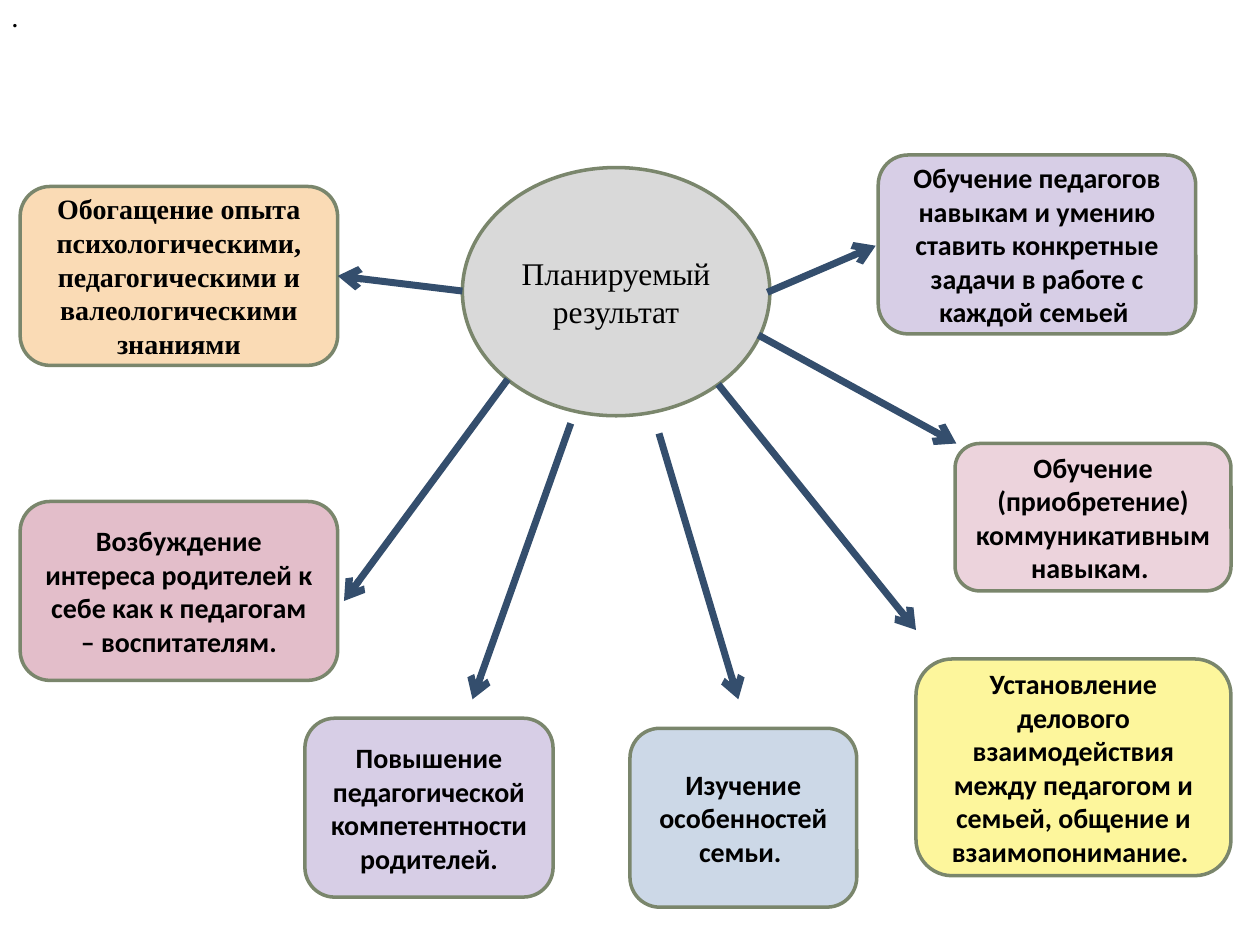
from lxml import etree
from pptx import Presentation
from pptx.dml.color import RGBColor
from pptx.enum.shapes import MSO_CONNECTOR, MSO_SHAPE
from pptx.enum.text import MSO_ANCHOR, MSO_AUTO_SIZE, PP_ALIGN
from pptx.oxml.ns import qn
from pptx.util import Inches, Pt

ELLIPSE, ROUNDED = MSO_SHAPE.OVAL, MSO_SHAPE.ROUNDED_RECTANGLE
STRAIGHT = MSO_CONNECTOR.STRAIGHT
MIDDLE = MSO_ANCHOR.MIDDLE
CENTER, JUSTIFY = PP_ALIGN.CENTER, PP_ALIGN.JUSTIFY
GROW = MSO_AUTO_SIZE.SHAPE_TO_FIT_TEXT

WIDTH, HEIGHT = Inches(10), Inches(7.5)
COLS, ROWS = 100, 75
SERIF, SANS = "Times New Roman", "Calibri"
BORDER, ARROW, BLACK = "7A866C", "344E6D", "000000"

HUB = (36.7, 13.3, 24.4, 19.7)
RESULTS = [
    ((24.2, 57, 19.7, 14.2), "D7CEE6", SANS,
     "Повышение педагогической компетентности родителей."),
    ((1.6, 39.8, 25.2, 14.2), "E3BECA", SANS,
     "Возбуждение интереса родителей к себе как к педагогам – воспитателям."),
    ((75.8, 35.2, 21.9, 11.7), "ECD3DC", SANS,
     "Обучение (приобретение) коммуникативным навыкам. "),
    ((69.7, 12.3, 25.2, 14.2), "D7CEE6", SANS,
     "Обучение педагогов навыкам и умению ставить конкретные задачи "
     "в работе с каждой семьей "),
    ((1.6, 14.8, 25.2, 14.2), "FADBB5", SERIF,
     "Обогащение опыта психологическими, педагогическими и "
     "валеологическими знаниями"),
    ((50, 57.8, 18, 14.2), "CCD8E7", SANS, "Изучение особенностей семьи. "),
    ((72.7, 52.3, 25, 17.2), "FDF69C", SANS,
     "Установление делового взаимодействия между педагогом и семьей, "
     "общение и взаимопонимание. "),
]
ARROWS = [
    (45.3, 33.6, 37.5, 55.5),
    (60.2, 26.6, 75.9, 35.2),
    (60.9, 23.2, 69.5, 19.5),
    (36.7, 23.1, 26.8, 21.9),
    (40.3, 30.1, 27.3, 47.7),
    (52.3, 34.4, 58.6, 55.5),
    (57, 30.5, 72.7, 50),
]


def color(value):
    """Turn a hex string into a colour."""
    return RGBColor.from_string(value)


def place(box):
    """Turn two column and row pairs into slide lengths."""
    x, y, x2, y2 = box
    return (int(x * WIDTH / COLS), int(y * HEIGHT / ROWS),
            int(x2 * WIDTH / COLS), int(y2 * HEIGHT / ROWS))


def write(tf, text, font, size, bold, align):
    """Put one styled run into a text frame."""
    tf.vertical_anchor = MIDDLE
    p = tf.paragraphs[0]
    p.alignment = align
    r = p.add_run()
    r.text = text
    r.font.name = font
    r.font.size = Pt(size)
    r.font.bold = bold
    r.font.color.rgb = color(BLACK)


def add_node(s, kind, box, fill, text, font, size, bold):
    """Draw an outlined shape with centred text."""
    sp = s.shapes.add_shape(kind, *place(box))
    sp.shadow.inherit = False
    sp.fill.solid()
    sp.fill.fore_color.rgb = color(fill)
    sp.line.color.rgb = color(BORDER)
    sp.line.width = Pt(2)
    sp.text_frame.word_wrap = True
    write(sp.text_frame, text, font, size, bold, CENTER)


def add_arrow(s, ends):
    """Draw an arrow from the hub towards a result."""
    cx = s.shapes.add_connector(STRAIGHT, *place(ends))
    cx.line.color.rgb = color(ARROW)
    cx.line.width = Pt(4)
    etree.SubElement(cx.line._get_or_add_ln(), qn("a:tailEnd"), type="arrow")
    etree.SubElement(cx._element.spPr, qn("a:effectLst"))


def add_mark(s, box):
    """Write the small dot in the slide corner."""
    tf = s.shapes.add_textbox(*place(box)).text_frame
    tf.word_wrap = False
    tf.auto_size = GROW
    write(tf, ".", SERIF, 12, True, JUSTIFY)


def add_diagram(s):
    """Place the hub, its results and the arrows between them."""
    add_node(s, ELLIPSE, HUB, "D9D9D9", "Планируемый результат",
             SERIF, 18, False)
    for box, fill, font, text in RESULTS:
        add_node(s, ROUNDED, box, fill, text, font, 16, True)
    for ends in ARROWS:
        add_arrow(s, ends)


def main():
    """Build and save the slide."""
    prs = Presentation()
    prs.slide_width, prs.slide_height = WIDTH, HEIGHT
    s = prs.slides.add_slide(prs.slide_layouts[6])
    add_diagram(s)
    add_mark(s, (0, 0, 2.5, 3))
    prs.save("out.pptx")


if __name__ == "__main__":
    main()
